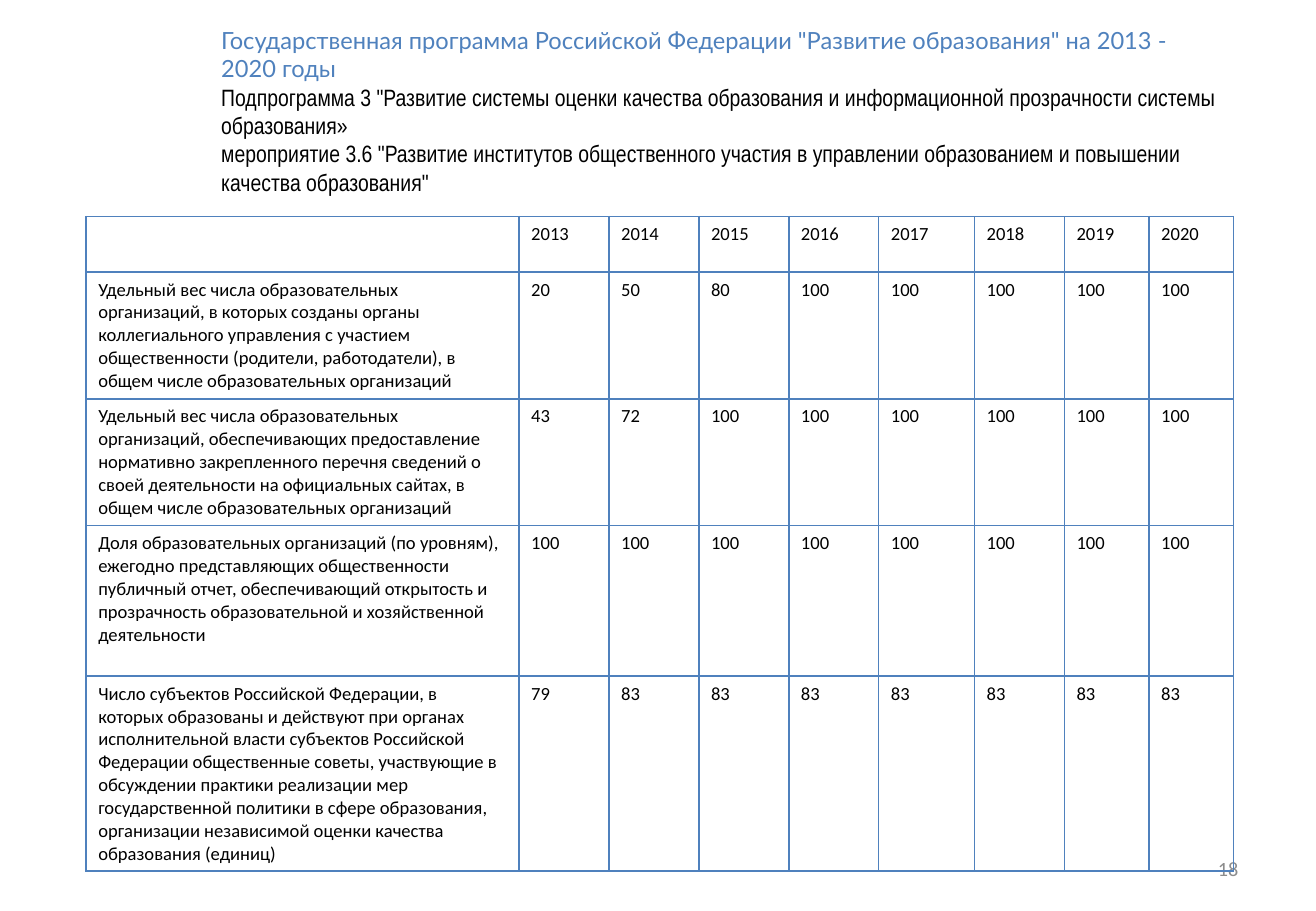
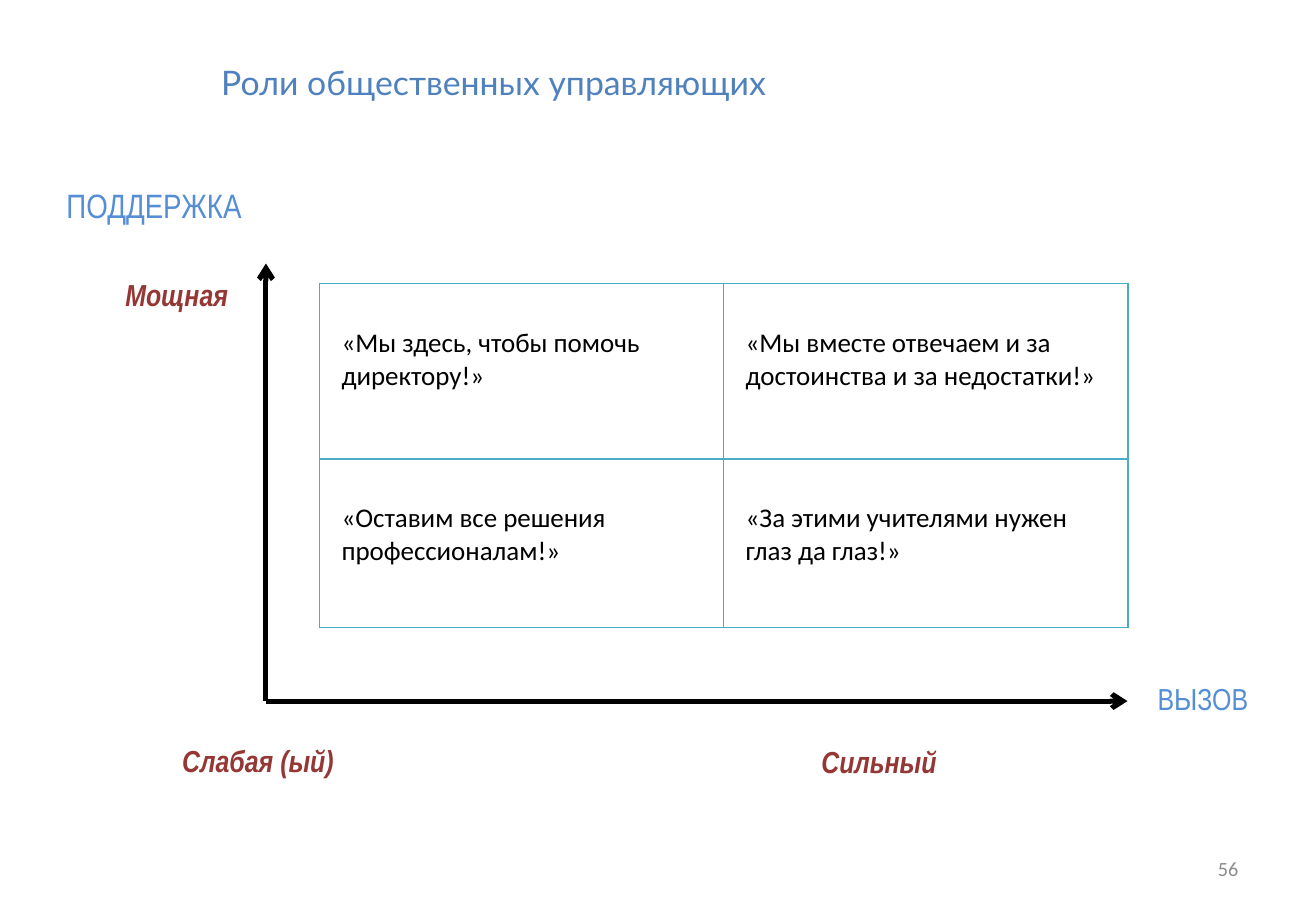
"""Build two slides on public participation in school management."""
from lxml import etree
from pptx import Presentation
from pptx.dml.color import RGBColor
from pptx.enum.shapes import MSO_CONNECTOR
from pptx.enum.text import MSO_ANCHOR, MSO_AUTO_SIZE, PP_ALIGN
from pptx.oxml.ns import qn
from pptx.util import Cm, Pt

MIDDLE, TOP = MSO_ANCHOR.MIDDLE, MSO_ANCHOR.TOP
LEFT, RIGHT = PP_ALIGN.LEFT, PP_ALIGN.RIGHT
FIXED = MSO_AUTO_SIZE.NONE
STRAIGHT = MSO_CONNECTOR.STRAIGHT

HEAD = {"name": "Lato", "size": Pt(14), "color": "4F81BD"}
SUB = {"name": "Arial Narrow", "size": Pt(14), "color": "000000"}
CELL = {"name": "Calibri", "size": Pt(11), "color": "000000"}
PAGE = {"name": "Calibri", "size": Pt(12), "color": "8C8C8C"}
AXIS = {"name": "Arial Narrow", "size": Pt(18), "color": "558ED5"}
MARK = {**AXIS, "color": "953735", "bold": True, "italic": True}


def write(frame, lines, anchor=TOP, align=LEFT):
    """Fill a text frame with one styled paragraph per (text, style) pair."""
    frame.word_wrap = True
    frame.vertical_anchor = anchor
    for i, (text, style) in enumerate(lines):
        par = frame.add_paragraph() if i else frame.paragraphs[0]
        par.alignment = align
        run = par.add_run()
        run.text = text
        for key, val in style.items():
            if key == "color":
                run.font.color.rgb = RGBColor.from_string(val)
            else:
                setattr(run.font, key, val)


def grid(slide, spot, cols, rows, texts, style, edge, pads):
    """Draw an unfilled table with thin borders."""
    left, top = spot
    table = slide.shapes.add_table(len(rows), len(cols), Cm(left), Cm(top),
                                   Cm(sum(cols)), Cm(sum(rows))).table
    table.first_row = table.horz_banding = False
    for col, width in zip(table.columns, cols):
        col.width = Cm(width)
    for row, height, line in zip(table.rows, rows, texts):
        row.height = Cm(height)
        for cell, text in zip(row.cells, line):
            for side, pad in pads.items():
                setattr(cell, "margin_" + side, Cm(pad))
            if text:
                write(cell.text_frame, [(text, style)])
            props = cell._tc.get_or_add_tcPr()
            for tag in ("a:lnL", "a:lnR", "a:lnT", "a:lnB"):
                line_el = etree.SubElement(props, qn(tag), w=str(Pt(1)))
                fill = etree.SubElement(line_el, qn("a:solidFill"))
                etree.SubElement(fill, qn("a:srgbClr"), val=edge)
            cell.fill.background()


prs = Presentation()
prs.slide_width, prs.slide_height = Cm(27.51), Cm(19.05)
layout = prs.slide_layouts[5]

pages = [
    ("18", (4.37, 0.42, 21.41, 3.8), [
        ('Государственная программа Российской Федерации "Развитие образования" на 2013 - 2020 годы', HEAD),
        ('Подпрограмма 3 "Развитие системы оценки качества образования и информационной прозрачности системы образования»', SUB),
        ('мероприятие 3.6 "Развитие институтов общественного участия в управлении образованием и повышении качества образования"', SUB),
    ]),
    ("56", (4.37, 0.53, 21.41, 2.39),
     [("Роли общественных управляющих", {**HEAD, "size": Pt(20)})]),
]
slides = []
for num, place, lines in pages:
    slide = prs.slides.add_slide(layout)
    title = slide.shapes.title
    title.left, title.top, title.width, title.height = map(Cm, place)
    title.text_frame.auto_size = FIXED
    write(title.text_frame, lines, MIDDLE)
    box = slide.shapes.add_textbox(Cm(19.71), Cm(17.65), Cm(6.43), Cm(1.02))
    write(box.text_frame, [(num, PAGE)], MIDDLE, RIGHT)
    slides.append(slide)
goals, roles = slides

rates = [
    ["", *map(str, range(2013, 2021))],
    ["Удельный вес числа образовательных организаций, в которых созданы органы коллегиального управления с участием общественности (родители, работодатели), в общем числе образовательных организаций",
     "20", "50", "80", *["100"] * 5],
    ["Удельный вес числа образовательных организаций, обеспечивающих предоставление нормативно закрепленного перечня сведений о своей деятельности на официальных сайтах, в общем числе образовательных организаций",
     "43", "72", *["100"] * 6],
    ["Доля образовательных организаций (по уровням), ежегодно представляющих общественности публичный отчет, обеспечивающий открытость и прозрачность образовательной и хозяйственной деятельности",
     *["100"] * 8],
    ["Число субъектов Российской Федерации, в которых образованы и действуют при органах исполнительной власти субъектов Российской Федерации общественные советы, участвующие в обсуждении практики реализации мер государственной политики в сфере образования, организации независимой оценки качества образования (единиц)",
     "79", *["83"] * 7],
]
grid(goals, (1.8, 4.53), [9.05, *[1.88] * 4, 2, 1.88, 1.77, 1.77],
     [1.16, 2.65, 2.65, 3.15, 4.07], rates, CELL, "4F81BD", {})

quotes = [
    ["«Мы здесь, чтобы помочь директору!»",
     "«Мы вместе отвечаем и за достоинства и за недостатки!»"],
    ["«Оставим все решения профессионалам!»",
     "«За этими учителями нужен глаз да глаз!»"],
]
grid(roles, (6.68, 5.93), [8.45] * 2, [3.67, 3.52], quotes,
     {**CELL, "size": Pt(16)}, "4BACC6",
     {"left": 0.46, "right": 0.46, "top": 0.9, "bottom": 0.23})

for x, y in ((5.56, 5.51), (23.57, 14.66)):
    arrow = roles.shapes.add_connector(STRAIGHT, Cm(5.56), Cm(14.66), Cm(x), Cm(y))
    arrow.line.width = Pt(3)
    arrow.line.color.rgb = RGBColor.from_string("000000")
    etree.SubElement(arrow.line._get_or_add_ln(), qn("a:tailEnd"), type="arrow")
    etree.SubElement(arrow._element.spPr, qn("a:effectLst"))

labels = [
    ("ПОДДЕРЖКА", (1.14, 3.73, 4.39, 1.12), {**AXIS, "size": Pt(20)}, 0.25, 0.13),
    ("ВЫЗОВ", (23.95, 14.1, 2.7, 1.02), AXIS, 0.25, 0.13),
    ("Слабая (ый)", (3.35, 15.29, 6.4, 1.22), MARK, 0.46, 0.23),
    ("Сильный", (16.71, 15.32, 5.05, 1.27), MARK, 0.46, 0.23),
    ("Мощная", (2.16, 5.54, 5.41, 1.22), MARK, 0.46, 0.23),
]
for text, place, style, side, edge in labels:
    frame = roles.shapes.add_textbox(*map(Cm, place)).text_frame
    frame.margin_left = frame.margin_right = Cm(side)
    frame.margin_top = frame.margin_bottom = Cm(edge)
    write(frame, [(text, style)])

prs.save("out.pptx")
